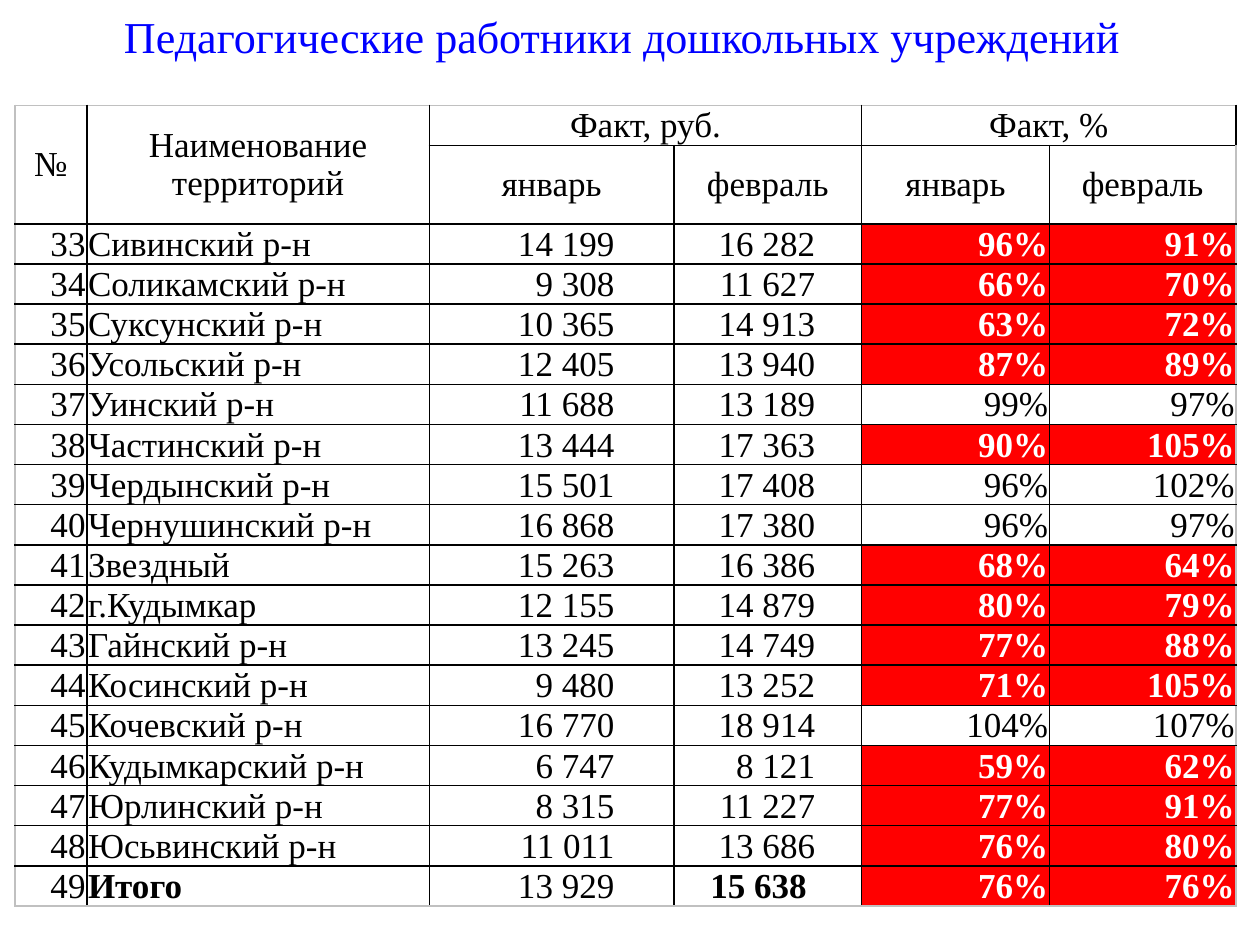
import dataclasses

import pptx
import pptx.dml.color
import pptx.enum.text
import pptx.oxml
import pptx.oxml.ns
import pptx.util

Pt = pptx.util.Pt
ALIGN = pptx.enum.text.PP_ALIGN
ANCHOR = pptx.enum.text.MSO_ANCHOR


@dataclasses.dataclass(frozen=True)
class Theme:
    font: str = "Times New Roman"
    title_size: float = 25.2
    table_size: float = 20
    title: str = "0000FF"
    text: str = "000000"
    flag_fill: str = "FF0000"
    flag_text: str = "FFFFFF"
    grid: str = "000000"
    frame: str = "C0C0C0"
    line: float = 1


TITLE = "Педагогические работники дошкольных учреждений"
WIDTHS = [41, 195.8, 139.7, 107.3, 107.3, 106.6]
HEADER_HEIGHTS = [23, 44.7]
BODY_HEIGHT = 22.96
RIGHT_INSETS = [0.72, 0.72, 34, 26.6, 0.72, 0.72]
TOTAL_INSET = 31.4
BODY_ALIGN = [ALIGN.RIGHT, ALIGN.LEFT] + [ALIGN.RIGHT] * 4

HEADERS = [
    (0, 0, 2, 1, "№"),
    (0, 1, 2, 1, "Наименование территорий"),
    (0, 2, 1, 2, "Факт, руб."),
    (0, 4, 1, 2, "Факт, %"),
    (1, 2, 1, 1, "январь"),
    (1, 3, 1, 1, "февраль"),
    (1, 4, 1, 1, "январь"),
    (1, 5, 1, 1, "февраль"),
]

FIRST_NUMBER = 33
ROWS = [
    ("Сивинский р-н", "14 199", "16 282", "96%", "91%", True),
    ("Соликамский р-н", "9 308", "11 627", "66%", "70%", True),
    ("Суксунский р-н", "10 365", "14 913", "63%", "72%", True),
    ("Усольский р-н", "12 405", "13 940", "87%", "89%", True),
    ("Уинский р-н", "11 688", "13 189", "99%", "97%", False),
    ("Частинский р-н", "13 444", "17 363", "90%", "105%", True),
    ("Чердынский р-н", "15 501", "17 408", "96%", "102%", False),
    ("Чернушинский р-н", "16 868", "17 380", "96%", "97%", False),
    ("Звездный", "15 263", "16 386", "68%", "64%", True),
    ("г.Кудымкар", "12 155", "14 879", "80%", "79%", True),
    ("Гайнский р-н", "13 245", "14 749", "77%", "88%", True),
    ("Косинский р-н", "9 480", "13 252", "71%", "105%", True),
    ("Кочевский р-н", "16 770", "18 914", "104%", "107%", False),
    ("Кудымкарский р-н", "6 747", "8 121", "59%", "62%", True),
    ("Юрлинский р-н", "8 315", "11 227", "77%", "91%", True),
    ("Юсьвинский р-н", "11 011", "13 686", "76%", "80%", True),
    ("Итого", "13 929", "15 638", "76%", "76%", True),
]


def rgb(value):
    return pptx.dml.color.RGBColor.from_string(value)


def assign(obj, values):
    for name, value in values.items():
        setattr(obj, name, value)


class SlideBuilder:
    def __init__(self, prs, theme):
        self.theme = theme
        self.s = prs.slides.add_slide(prs.slide_layouts[5])

    def text(self, tf, text, size, color, align, bold=False):
        tf.word_wrap = True
        p = tf.paragraphs[0]
        p.alignment = align
        r = p.add_run()
        r.text = text
        assign(r.font, {"name": self.theme.font, "size": Pt(size), "bold": bold})
        r.font.color.rgb = rgb(color)

    def title(self, text, left, top, width, height):
        sp = self.s.shapes.title
        assign(sp, {"left": Pt(left), "top": Pt(top), "width": Pt(width), "height": Pt(height)})
        sp.text_frame.vertical_anchor = ANCHOR.MIDDLE
        self.text(sp.text_frame, text, self.theme.title_size, self.theme.title, ALIGN.CENTER)

    def table(self, left, top, widths, heights):
        frame = self.s.shapes.add_table(
            len(heights), len(widths), Pt(left), Pt(top), Pt(sum(widths)), Pt(sum(heights))
        )
        tbl = frame.table
        assign(tbl, {"first_row": False, "horz_banding": False})
        for col, width in zip(tbl.columns, widths):
            col.width = Pt(width)
        for row, height in zip(tbl.rows, heights):
            row.height = Pt(height)
        last_row, last_col = len(heights) - 1, len(widths) - 1
        for i in range(len(heights)):
            for j in range(len(widths)):
                edges = {"L": j == 0, "R": j == last_col, "T": i == 0, "B": i == last_row}
                self.borders(tbl.cell(i, j), edges)
                tbl.cell(i, j).fill.background()
        return tbl

    def borders(self, cell, edges):
        tc_pr = cell._tc.get_or_add_tcPr()
        for side, outer in edges.items():
            color = self.theme.frame if outer else self.theme.grid
            tc_pr.append(pptx.oxml.parse_xml(
                f'<a:ln{side} {pptx.oxml.ns.nsdecls("a")} w="{Pt(self.theme.line)}">'
                f'<a:solidFill><a:srgbClr val="{color}"/></a:solidFill></a:ln{side}>'
            ))

    def cell(self, cell, text, align, anchor, inset=0.72, bold=False, flagged=False):
        assign(cell, {
            "margin_left": Pt(0.72), "margin_right": Pt(inset),
            "margin_top": 0, "margin_bottom": 0, "vertical_anchor": anchor,
        })
        color = self.theme.text
        if flagged:
            cell.fill.solid()
            cell.fill.fore_color.rgb = rgb(self.theme.flag_fill)
            color = self.theme.flag_text
        self.text(cell.text_frame, text, self.theme.table_size, color, align, bold or flagged)


def main():
    prs = pptx.Presentation()
    assign(prs, {"slide_width": Pt(720), "slide_height": Pt(540)})
    slide = SlideBuilder(prs, Theme())
    slide.title(TITLE, 3, 4, 705, 33)

    tbl = slide.table(8.6, 60.2, WIDTHS, HEADER_HEIGHTS + [BODY_HEIGHT] * len(ROWS))
    for i, j, height, width, text in HEADERS:
        if height * width > 1:
            tbl.cell(i, j).merge(tbl.cell(i + height - 1, j + width - 1))
        slide.cell(tbl.cell(i, j), text, ALIGN.CENTER, ANCHOR.MIDDLE)

    for n, (*values, flagged) in enumerate(ROWS):
        total = n == len(ROWS) - 1
        for j, text in enumerate([str(FIRST_NUMBER + n), *values]):
            bold = total and j in (1, 3)
            inset = TOTAL_INSET if total and j == 3 else RIGHT_INSETS[j]
            slide.cell(
                tbl.cell(n + len(HEADER_HEIGHTS), j), text, BODY_ALIGN[j],
                ANCHOR.BOTTOM, inset, bold, flagged and j >= 4,
            )
    prs.save("out.pptx")


if __name__ == "__main__":
    main()
